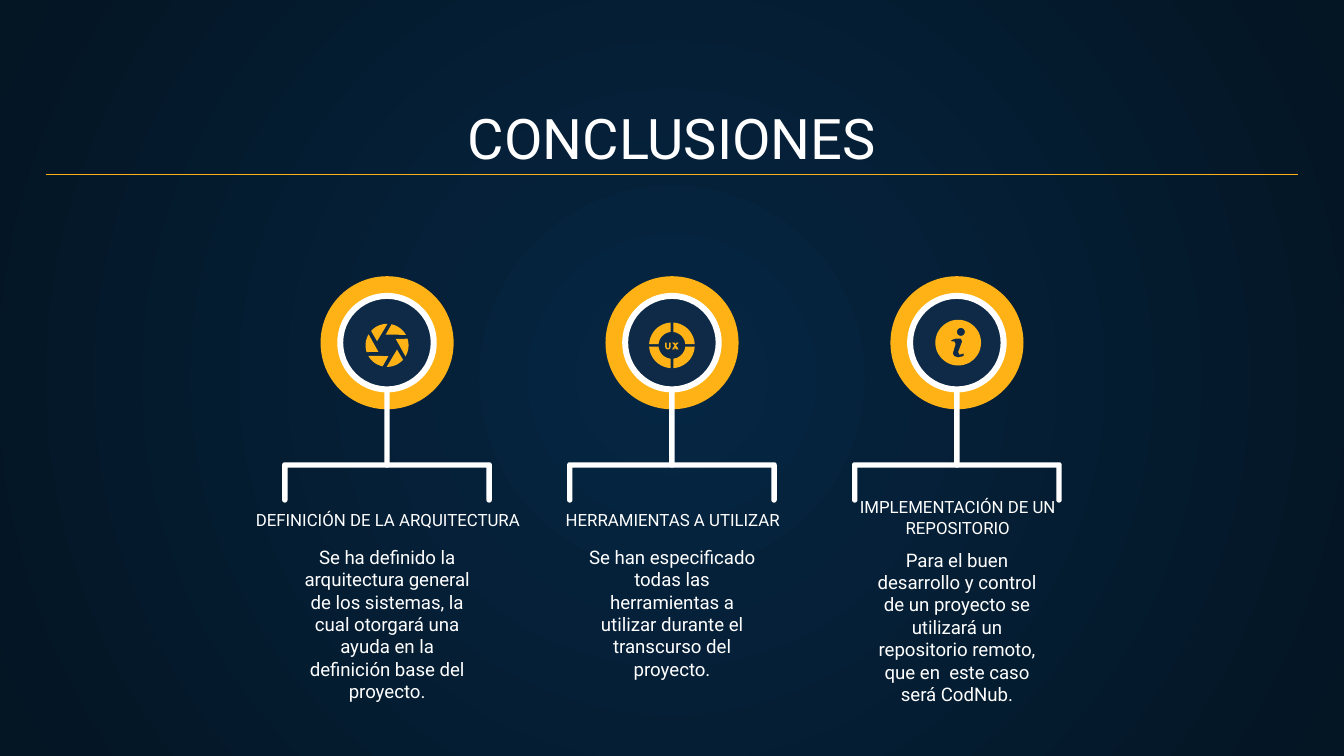
from math import asin, cos, degrees, radians, sin

from lxml import etree
from pptx import Presentation
from pptx.dml.color import RGBColor
from pptx.enum.shapes import MSO_CONNECTOR, MSO_SHAPE
from pptx.enum.text import MSO_ANCHOR, PP_ALIGN
from pptx.oxml.ns import qn
from pptx.util import Inches, Pt

OVAL = MSO_SHAPE.OVAL
DONUT = MSO_SHAPE.DONUT
ROUNDED = MSO_SHAPE.ROUNDED_RECTANGLE
STRAIGHT = MSO_CONNECTOR.STRAIGHT
TOP, BOTTOM = MSO_ANCHOR.TOP, MSO_ANCHOR.BOTTOM
CENTER = PP_ALIGN.CENTER

WHITE, ORANGE, NAVY = "FFFFFF", "FFB215", "0E2A47"
FONT = "Roboto"


def rgb(value):
    return RGBColor.from_string(value)


def write(tf, text, size=10, color=WHITE, font=FONT, align=CENTER):
    p = tf.paragraphs[0]
    p.alignment = align
    r = p.add_run()
    r.text = text
    r.font.size = Pt(size)
    r.font.name = font
    r.font.color.rgb = rgb(color)


def arc(cx, cy, radius, start, end, steps=10):
    angles = [radians(start + (end - start) * i / steps) for i in range(steps + 1)]
    return [(cx + radius * cos(a), cy + radius * sin(a)) for a in angles]


def shift(points, dx, dy):
    return [(x + dx, y + dy) for x, y in points]


class Deck:
    def __init__(self, width, height):
        self.prs = Presentation()
        self.prs.slide_width, self.prs.slide_height = Inches(width), Inches(height)
        self.s = self.prs.slides.add_slide(self.prs.slide_layouts[6])

    def background(self, inner, outer):
        fill = self.s.background.fill
        fill.gradient()
        for stop, color in zip(fill.gradient_stops, (inner, outer)):
            stop.color.rgb = rgb(color)
        grad = self.s.element.find(".//" + qn("a:gradFill"))
        grad.remove(grad.find(qn("a:lin")))
        radial = etree.SubElement(grad, qn("a:path"), path="circle")
        etree.SubElement(radial, qn("a:fillToRect"), l="50000", t="50000", r="50000", b="50000")

    def paint(self, sp, color):
        sp.shadow.inherit = False
        sp.fill.solid()
        sp.fill.fore_color.rgb = rgb(color)
        sp.line.fill.background()

    def text(self, text, x, y, w, h, anchor=TOP, **style):
        tf = self.s.shapes.add_textbox(Inches(x), Inches(y), Inches(w), Inches(h)).text_frame
        tf.word_wrap = True
        tf.vertical_anchor = anchor
        tf.margin_left = tf.margin_right = tf.margin_top = tf.margin_bottom = Inches(0.1)
        write(tf, text, **style)

    def shape(self, kind, cx, cy, w, h, color, adjust=None):
        sp = self.s.shapes.add_shape(kind, Inches(cx - w / 2), Inches(cy - h / 2), Inches(w), Inches(h))
        if adjust is not None:
            sp.adjustments[0] = adjust
        self.paint(sp, color)

    def outline(self, color, *contours):
        scaled = [[(Inches(x), Inches(y)) for x, y in c] for c in contours]
        builder = self.s.shapes.build_freeform(*scaled[0][0])
        builder.add_line_segments(scaled[0][1:])
        for contour in scaled[1:]:
            builder.move_to(*contour[0])
            builder.add_line_segments(contour[1:])
        self.paint(builder.convert_to_shape(), color)

    def line(self, x1, y1, x2, y2, color, width):
        c = self.s.shapes.add_connector(STRAIGHT, Inches(x1), Inches(y1), Inches(x2), Inches(y2))
        c.line.color.rgb = rgb(color)
        c.line.width = Pt(width)
        etree.SubElement(c.element.spPr, qn("a:effectLst"))

    def bracket(self, cx, top=3.44, bottom=3.74, half=0.78, thick=0.04):
        cap = thick / 2
        left, right = cx - half, cx + half
        self.outline(
            WHITE,
            arc(left + cap, top + cap, cap, 180, 270)
            + arc(right - cap, top + cap, cap, 270, 360)
            + arc(right - cap, bottom - cap, cap, 0, 180)
            + [(right - thick, top + thick), (left + thick, top + thick)]
            + arc(left + cap, bottom - cap, cap, 0, 180),
        )

    def badge(self, cx, cy=2.55):
        self.bracket(cx)
        self.shape(OVAL, cx, cy, 0.99, 0.99, ORANGE)
        self.shape(ROUNDED, cx, 2.98, 0.04, 1, WHITE, 0.5)
        self.shape(OVAL, cx, cy, 0.7, 0.7, NAVY)
        self.shape(DONUT, cx, cy, 0.74, 0.74, WHITE, 0.06)

    def aperture_icon(self, cx, cy):
        x, y = -0.01, -0.08
        for turn in range(0, 360, 60):
            a = radians(turn)
            tip = (cx + x * cos(a) - y * sin(a), cy + x * sin(a) + y * cos(a))
            self.outline(ORANGE, arc(cx, cy, 0.16, 282 + turn, 331 + turn) + [tip])

    def ux_icon(self, cx, cy, outer=0.17, inner=0.1, gap=0.01):
        a, b = degrees(asin(gap / outer)), degrees(asin(gap / inner))
        for turn in range(0, 360, 90):
            self.outline(
                ORANGE,
                arc(cx, cy, outer, turn + a, turn + 90 - a)
                + arc(cx, cy, inner, turn + 90 - b, turn + b),
            )
        u = [(-0.05, -0.02), (-0.04, -0.02)] + arc(-0.03, 0.01, 0.01, 180, 0)
        u += [(-0.02, -0.02), (-0.01, -0.02)] + arc(-0.03, 0.01, 0.02, 0, 180)
        x = [(0, -0.02), (0.02, -0.02), (0.03, -0.01), (0.03, -0.02), (0.05, -0.02), (0.03, 0),
             (0.05, 0.03), (0.03, 0.03), (0.02, 0.01), (0.02, 0.03), (0, 0.03), (0.02, 0)]
        for letter in (u, x):
            self.outline(ORANGE, shift(letter, cx, cy))

    def info_icon(self, cx, cy):
        stem = [(-0.05, -0.02), (-0.02, -0.03), (0.02, -0.03), (0.03, -0.01), (0, 0.07),
                (0.01, 0.09), (0.04, 0.08), (0.04, 0.1), (0, 0.11), (-0.03, 0.1),
                (-0.04, 0.08), (-0.02, 0.01), (-0.03, -0.01), (-0.05, -0.01)]
        self.outline(
            ORANGE,
            arc(cx, cy, 0.17, 0, 360, 48),
            arc(cx + 0.02, cy - 0.08, 0.03, 0, 360, 16),
            shift(stem, cx, cy),
        )


def main():
    deck = Deck(10, 10 * 9 / 16)
    deck.background("052643", "041523")
    deck.text("CONCLUSIONES", 0.34, 0.71, 9.32, 0.66, BOTTOM, size=30)

    columns = [
        ("DEFINICIÓN DE LA ARQUITECTURA", 3.81, 0.21,
         "Se ha definido la arquitectura general de los sistemas, la cual otorgará una ayuda "
         "en la definición base del proyecto.", 3.96, 1.17),
        ("HERRAMIENTAS A UTILIZAR", 3.81, 0.21,
         "Se han especificado todas las herramientas a utilizar durante el transcurso del "
         "proyecto.", 3.96, 1.23),
        ("IMPLEMENTACIÓN DE UN REPOSITORIO", 3.6, 0.5,
         "Para el buen desarrollo y control de un proyecto se utilizará un repositorio remoto, "
         "que en  este caso será CodNub.", 3.98, 1.32),
    ]
    for i, (heading, head_y, head_h, body, body_y, body_h) in enumerate(columns):
        cx = 2.88 + 2.12 * i
        deck.text(body, cx - 0.76, body_y, 1.52, body_h)
        deck.text(heading, cx - 1.13, head_y, 2.27, head_h, BOTTOM, size=9)
        deck.badge(cx)

    deck.aperture_icon(2.88, 2.57)
    deck.ux_icon(5, 2.57)
    deck.info_icon(7.13, 2.55)
    deck.line(0.34, 1.3, 9.66, 1.3, ORANGE, 0.75)
    deck.prs.save("out.pptx")


if __name__ == "__main__":
    main()
